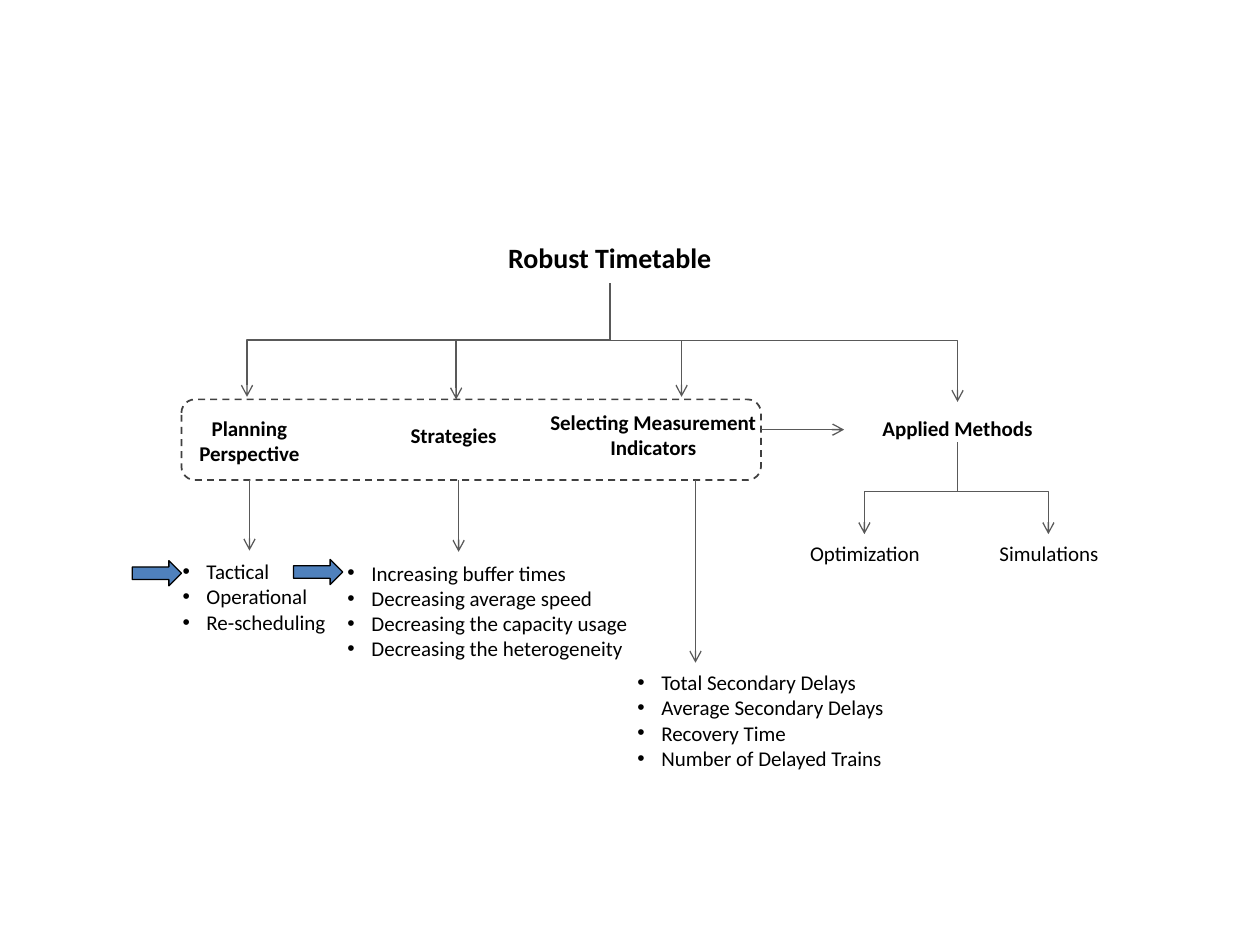
from dataclasses import dataclass

import pptx
import pptx.dml.color
import pptx.enum.dml
import pptx.enum.shapes
import pptx.enum.text
import pptx.oxml
import pptx.oxml.ns
import pptx.util
from lxml import etree
from pptx.util import Inches

qn = pptx.oxml.ns.qn
SHAPES = pptx.enum.shapes.MSO_SHAPE
CONNECTORS = pptx.enum.shapes.MSO_CONNECTOR
ALIGN = pptx.enum.text.PP_ALIGN


@dataclass(frozen=True)
class Theme:
    font: str = "Calibri"
    title_size: int = 16
    body_size: int = 12
    text: str = "000000"
    connector: str = "595959"
    frame: str = "404040"
    marker: str = "4F81BD"
    thin: float = 0.75
    frame_width: float = 1


@dataclass(frozen=True)
class Box:
    """A region in inches; inner() gives a box placed relative to it."""
    left: float
    top: float
    width: float
    height: float

    def inner(self, left, top, width, height):
        return Box(self.left + left, self.top + top, width, height)

    def point(self, x, y):
        return self.left + x, self.top + y

    def lengths(self):
        return [Inches(n) for n in (self.left, self.top, self.width, self.height)]


THEME = Theme()


def color(code):
    return pptx.dml.color.RGBColor.from_string(code)


def style_paragraph(para, size, bold, align):
    para.alignment = align
    para.font.name = THEME.font
    para.font.size = pptx.util.Pt(size)
    para.font.bold = bold
    para.font.color.rgb = color(THEME.text)


def add_bullet(para):
    properties = para._p.get_or_add_pPr()
    properties.set("marL", str(Inches(0.19)))
    properties.set("indent", str(Inches(-0.19)))
    etree.SubElement(properties, qn("a:buFont")).set("typeface", "Arial")
    etree.SubElement(properties, qn("a:buChar")).set("char", "•")


def add_text(page, box, lines, bold=False, bulleted=False):
    frame = page.shapes.add_textbox(*box.lengths()).text_frame
    frame.word_wrap = True
    frame.auto_size = pptx.enum.text.MSO_AUTO_SIZE.SHAPE_TO_FIT_TEXT
    frame.vertical_anchor = pptx.enum.text.MSO_ANCHOR.MIDDLE
    for index, line in enumerate(lines):
        para = frame.paragraphs[0] if index == 0 else frame.add_paragraph()
        para.text = line
        if bulleted:
            add_bullet(para)
        style_paragraph(para, THEME.body_size, bold,
                        ALIGN.LEFT if bulleted else ALIGN.CENTER)


def add_arrow(page, start, end, kind=CONNECTORS.STRAIGHT):
    arrow = page.shapes.add_connector(kind, *[Inches(n) for n in (*start, *end)])
    arrow.line.color.rgb = color(THEME.connector)
    arrow.line.width = pptx.util.Pt(THEME.thin)
    etree.SubElement(arrow.line._get_or_add_ln(), qn("a:tailEnd")).set("type", "arrow")
    etree.SubElement(arrow._element.spPr, qn("a:effectLst"))
    return arrow


def add_branch(page, start, end, bend):
    """Elbow arrow that runs down, sideways at height bend, then down."""
    (x1, y1), (x2, y2) = start, end
    drop, reach = y2 - y1, abs(x2 - x1)
    left, top = (x1 + x2 - drop) / 2, (y1 + y2 - reach) / 2
    arrow = add_arrow(page, (left, top), (left + drop, top + reach), CONNECTORS.ELBOW)
    properties = arrow._element.spPr
    transform = properties.find(qn("a:xfrm"))
    if x2 < x1:
        transform.set("rot", str(90 * 60000))
    else:
        transform.set("rot", str(270 * 60000))
        transform.set("flipH", "1")
    geometry = properties.find(qn("a:prstGeom"))
    adjustments = geometry.find(qn("a:avLst"))
    if adjustments is None:
        adjustments = etree.SubElement(geometry, qn("a:avLst"))
    guide = etree.SubElement(adjustments, qn("a:gd"))
    guide.set("name", "adj1")
    guide.set("fmla", f"val {round((bend - y1) / drop * 100000)}")


def add_root(page, box):
    title = page.shapes.title
    title.left, title.top, title.width, title.height = box.inner(1.47, 0, 2.82, 0.37).lengths()
    title.text_frame.text = "Robust Timetable"
    title.text_frame.vertical_anchor = pptx.enum.text.MSO_ANCHOR.MIDDLE
    style_paragraph(title.text_frame.paragraphs[0], THEME.title_size, True, ALIGN.CENTER)
    for x, y in ((0, 1.29), (1.66, 1.31), (3.45, 1.29), (5.64, 1.33)):
        add_branch(page, box.point(2.88, 0.39), box.point(x, y), box.top + 0.84)


def add_criteria(page, box):
    frame = page.shapes.add_shape(SHAPES.ROUNDED_RECTANGLE, *box.lengths())
    frame.shadow.inherit = False
    frame.fill.background()
    frame.line.color.rgb = color(THEME.frame)
    frame.line.width = pptx.util.Pt(THEME.frame_width)
    frame.line.dash_style = pptx.enum.dml.MSO_LINE.DASH
    for label, left, top, width, height in (
        ("Planning Perspective", -0.14, 0.08, 1.36, 0.5),
        ("Strategies", 1.56, 0.13, 1.2, 0.3),
        ("Selecting Measurement Indicators", 2.66, 0.03, 2.17, 0.5),
    ):
        add_text(page, box.inner(left, top, width, height), [label], bold=True)
    for x, end in ((0.54, 1.2), (2.2, 1.21), (4.08, 2.09)):
        add_arrow(page, box.point(x, box.height), box.point(x, end))
    add_arrow(page, box.point(box.width, 0.24), box.point(5.26, 0.24))


def add_options(page, box, items, marker=None):
    """Bulleted list, with a block arrow at the marker offset if one is given."""
    if marker:
        arrow = page.shapes.add_shape(SHAPES.RIGHT_ARROW,
                                      *box.inner(*marker, 0.39, 0.2).lengths())
        arrow.shadow.inherit = False
        arrow.fill.solid()
        arrow.fill.fore_color.rgb = color(THEME.marker)
        arrow.line.color.rgb = color(THEME.text)
        arrow.line.width = pptx.util.Pt(THEME.thin)
    add_text(page, box, items, bulleted=True)


def add_methods(page, box):
    add_text(page, box.inner(0.52, 0, 1.88, 0.3), ["Applied Methods"], bold=True)
    for index, label in enumerate(("Optimization", "Simulations")):
        left = 1.46 * index
        add_text(page, box.inner(left, 0.99, 1.45, 0.3), [label])
        add_branch(page, box.point(1.46, 0.26), box.point(left + 0.72, 0.99),
                   box.top + 0.65)


def main():
    deck = pptx.Presentation()
    deck.slide_width, deck.slide_height = Inches(10), Inches(7.5)
    page = deck.slides.add_slide(deck.slide_layouts.get_by_name("Title Only"))
    add_root(page, Box(1.96, 1.86, 5.64, 1.33))
    add_criteria(page, Box(1.44, 3.17, 4.6, 0.64))
    add_options(page, Box(1.35, 4.38, 1.78, 0.71),
                ["Tactical", "Operational", "Re-scheduling"], marker=(-0.3, 0.07))
    add_options(page, Box(2.66, 4.39, 3.03, 0.91),
                ["Increasing buffer times", "Decreasing average speed",
                 "Decreasing the capacity usage", "Decreasing the heterogeneity"],
                marker=(-0.33, 0.05))
    add_options(page, Box(4.96, 5.26, 2.82, 0.91),
                ["Total Secondary Delays", "Average Secondary Delays",
                 "Recovery Time", "Number of Delayed Trains"])
    add_methods(page, Box(6.14, 3.25, 2.91, 1.29))
    deck.save("out.pptx")


if __name__ == "__main__":
    main()
